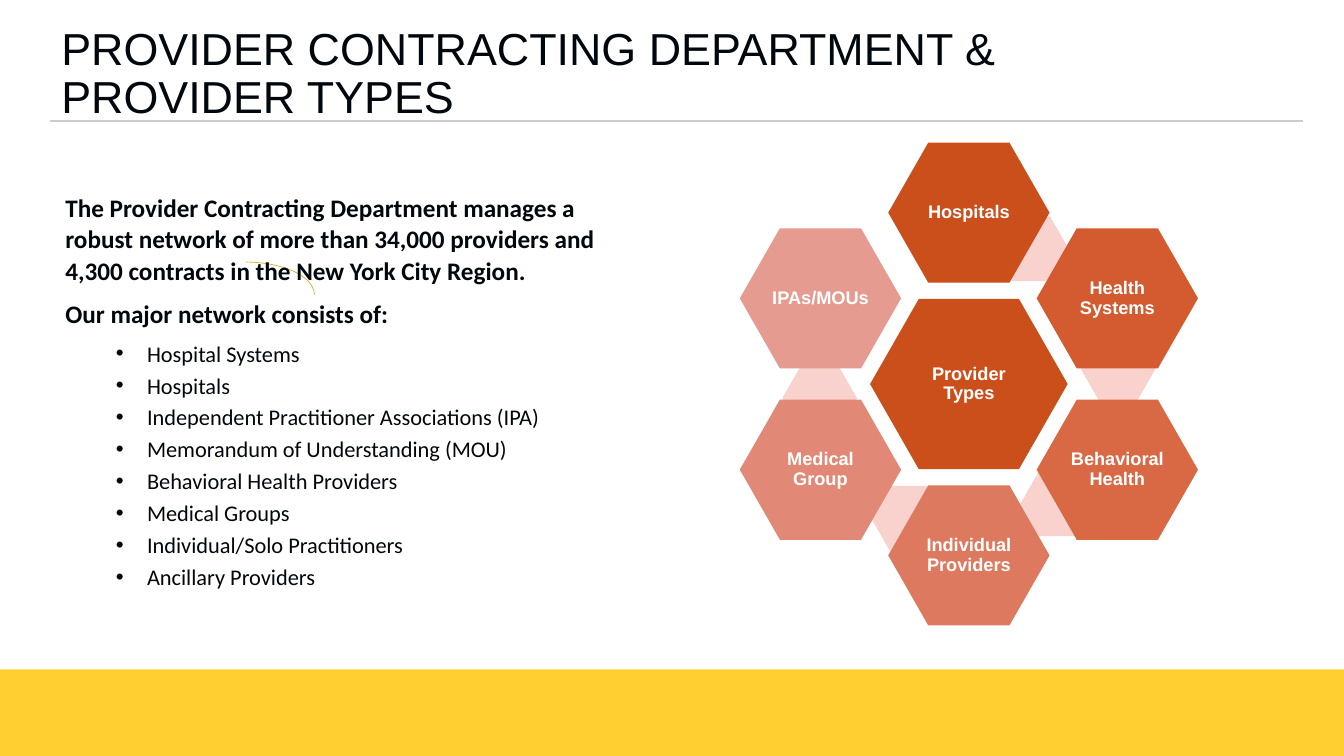
from math import cos, radians, sin

from lxml.etree import SubElement
from pptx import Presentation
from pptx.dml.color import RGBColor
from pptx.enum.shapes import MSO_CONNECTOR, MSO_SHAPE
from pptx.enum.text import MSO_ANCHOR, PP_ALIGN
from pptx.oxml.ns import qn
from pptx.util import Inches, Pt

# Content
TITLE = "PROVIDER CONTRACTING DEPARTMENT & \vPROVIDER TYPES"
LEAD = [
    "The Provider Contracting Department manages a robust network of more than "
    "34,000 providers and 4,300 contracts in the New York City Region.",
    "Our major network consists of:\u00a0",
]
NETWORK = [
    "Hospital Systems",
    "Hospitals",
    "Independent Practitioner Associations (IPA)",
    "Memorandum of Understanding (MOU)",
    "Behavioral Health Providers",
    "Medical Groups",
    "Individual/Solo Practitioners",
    "Ancillary Providers",
]

# Colours
INK = RGBColor(0x00, 0x08, 0x0E)
WHITE = RGBColor(0xFF, 0xFF, 0xFF)
YELLOW = RGBColor(0xFF, 0xCF, 0x31)
GOLD = RGBColor(0xD8, 0xAE, 0x30)
GREY = RGBColor(0xCC, 0xCC, 0xCC)
PINK = RGBColor(0xFA, 0xD2, 0xCD)
RUST = RGBColor(0xCB, 0x4F, 0x1B)

# Provider types, clockwise from the top
HUB = "Provider Types"
RING = [
    ("Hospitals", RUST),
    ("Health Systems", RGBColor(0xD4, 0x5A, 0x2F)),
    ("Behavioral Health", RGBColor(0xD9, 0x69, 0x45)),
    ("Individual Providers", RGBColor(0xDD, 0x79, 0x5E)),
    ("Medical Group", RGBColor(0xE1, 0x89, 0x76)),
    ("IPAs/MOUs", RGBColor(0xE5, 0x9B, 0x8F)),
]
LINK_CENTRES = [(10.23, 2.47), (11.09, 3.66), (10.49, 5.0), (9.01, 5.14), (8.13, 3.95)]

# Geometry in inches
HUB_CENTRE = (9.61, 3.81)
RADIUS = 1.7
HUB_SIZE, RING_SIZE, LINK_SIZE = (1.96, 1.69), (1.6, 1.39), (0.74, 0.64)

# Formats
TITLE_FONT = {"name": "Arial", "size": Pt(32)}
LEAD_FONT = {"name": "Calibri", "size": Pt(18), "bold": True}
ITEM_FONT = {"name": "Calibri", "size": Pt(16), "bold": False}
HEX_FONT = {"name": "Arial", "size": Pt(13), "bold": True}
LEAD_SPACING = {"line_spacing": 1.05, "space_after": Pt(8)}
ITEM_SPACING = {"level": 1, "space_after": Pt(3.6)}

deck = Presentation()
deck.slide_width, deck.slide_height = Inches(13.33), Inches(7.5)
page = deck.slides.add_slide(deck.slide_layouts[6])


def set_all(target, values):
    for name, value in values.items():
        setattr(target, name, value)


def write(para, text, font, colour, spacing):
    para.text = text
    set_all(para, spacing)
    for span in para.runs:
        set_all(span.font, font)
        span.font.color.rgb = colour


def add_filled(kind, left, top, width, height, colour):
    shape = page.shapes.add_shape(kind, *map(Inches, (left, top, width, height)))
    shape.shadow.inherit = False
    shape.fill.solid()
    shape.fill.fore_color.rgb = colour
    shape.line.fill.background()
    return shape


def add_hexagon(centre, size, colour, label=""):
    (x, y), (width, height) = centre, size
    shape = add_filled(MSO_SHAPE.HEXAGON, x - width / 2, y - height / 2, width, height, colour)
    shape.adjustments[0] = 0.286
    if label:
        frame = shape.text_frame
        inset = Inches(0.02)
        set_all(frame, {"word_wrap": True, "vertical_anchor": MSO_ANCHOR.MIDDLE,
                        "margin_left": inset, "margin_right": inset,
                        "margin_top": inset, "margin_bottom": inset})
        write(frame.paragraphs[0], label, HEX_FONT, WHITE,
              {"alignment": PP_ALIGN.CENTER, "line_spacing": 0.9})


def add_text_frame(left, top, width, height):
    box = page.shapes.add_textbox(*map(Inches, (left, top, width, height)))
    box.text_frame.word_wrap = True
    return box.text_frame


# Footer band and title rule
add_filled(MSO_SHAPE.RECTANGLE, 0, 6.64, 13.33, 0.86, YELLOW)
rule = page.shapes.add_connector(
    MSO_CONNECTOR.STRAIGHT, *map(Inches, (0.5, 1.2, 12.92, 1.2)))
rule.line.color.rgb = GREY
rule.line.width = Pt(1)
SubElement(rule._element.spPr, qn("a:effectLst"))

# Title
title = add_text_frame(0.51, 0.35, 12.36, 0.79)
title.vertical_anchor = MSO_ANCHOR.MIDDLE
write(title.paragraphs[0], TITLE, TITLE_FONT, INK, {"line_spacing": 0.9})

# Thin arc behind the text
arc = page.shapes.add_shape(MSO_SHAPE.ARC, *map(Inches, (1.76, 2.6, 1.36, 0.65)))
arc.shadow.inherit = False
arc.fill.background()
arc.line.color.rgb = GOLD
arc.line.width = Pt(0.5)

# Department description and bullets
body = add_text_frame(0.55, 1.84, 5.59, 4.17)
for index, text in enumerate(LEAD):
    para = body.add_paragraph() if index else body.paragraphs[0]
    write(para, text, LEAD_FONT, INK, LEAD_SPACING)
for text in NETWORK:
    para = body.add_paragraph()
    properties = para._p.get_or_add_pPr()
    properties.set("marL", str(Inches(0.81)))
    properties.set("indent", str(-Inches(0.31)))
    write(para, text, ITEM_FONT, INK, ITEM_SPACING)
    SubElement(properties, qn("a:buFont"), typeface="Arial")
    SubElement(properties, qn("a:buChar"), char="•")

# Hexagon ring around the hub
for centre in LINK_CENTRES:
    add_hexagon(centre, LINK_SIZE, PINK)
add_hexagon(HUB_CENTRE, HUB_SIZE, RUST, HUB)
for index, (label, colour) in enumerate(RING):
    angle = radians(index * 360 / len(RING))
    centre = (HUB_CENTRE[0] + RADIUS * sin(angle), HUB_CENTRE[1] - RADIUS * cos(angle))
    add_hexagon(centre, RING_SIZE, colour, label)

deck.save("out.pptx")
